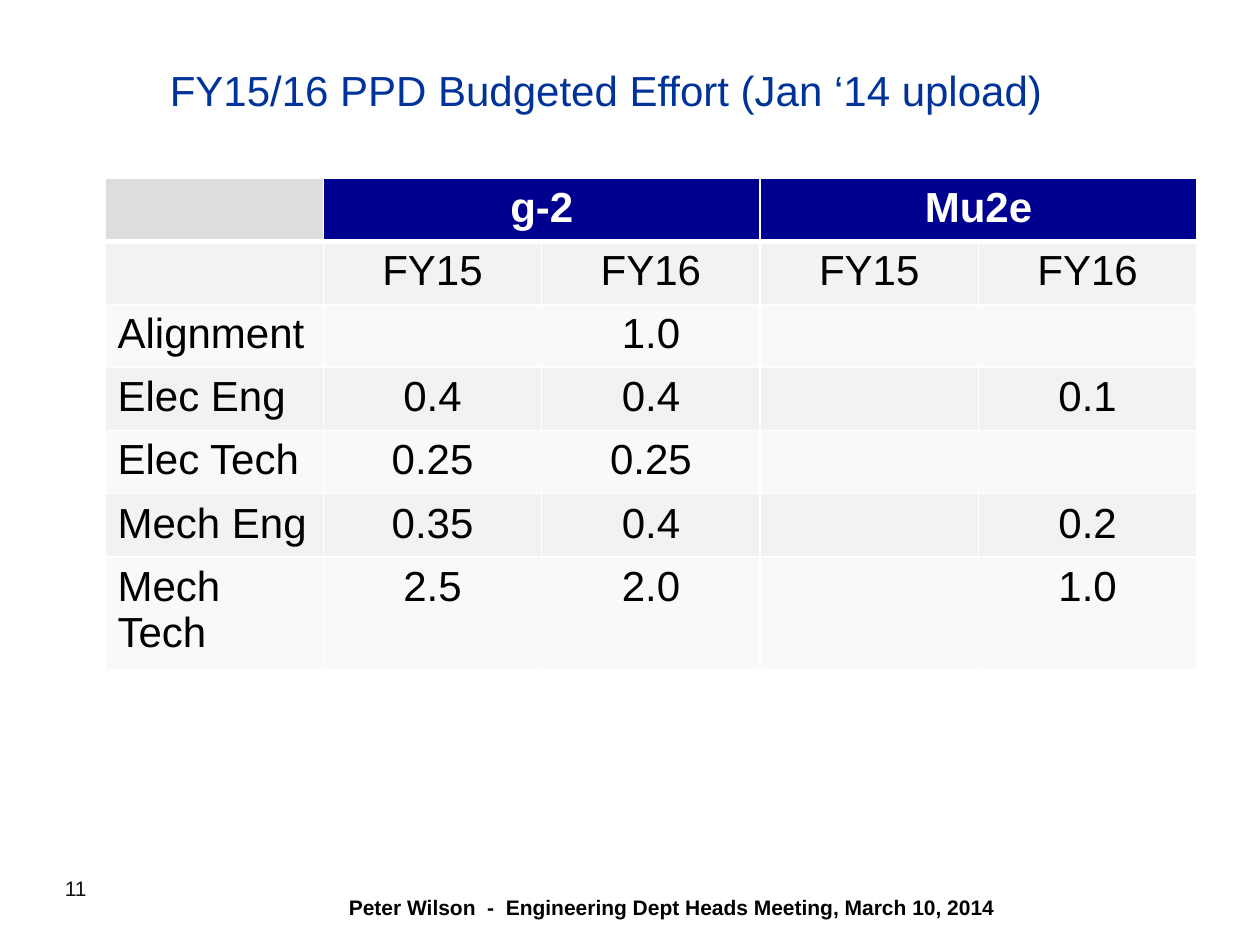
from dataclasses import dataclass

from lxml.etree import SubElement
from pptx import Presentation
from pptx.dml.color import RGBColor
from pptx.enum.text import MSO_ANCHOR, PP_ALIGN
from pptx.oxml.ns import qn
from pptx.slide import Slide
from pptx.util import Inches, Pt

CELL = 10 / 24
EFFORT = [
    ["", "g-2", "", "Mu2e", ""],
    ["", "FY15", "FY16", "FY15", "FY16"],
    ["Alignment", "", "1.0", "", ""],
    ["Elec Eng", "0.4", "0.4", "", "0.1"],
    ["Elec Tech", "0.25", "0.25", "", ""],
    ["Mech Eng", "0.35", "0.4", "", "0.2"],
    ["Mech Tech", "2.5", "2.0", "", "1.0"],
]


def color(value):
    return RGBColor.from_string(value)


def grid(*units):
    return [Inches(unit * CELL) for unit in units]


@dataclass
class SlideBuilder:
    """Draws styled elements on a grid of 24 columns by 18 rows."""

    slide: Slide
    font: str = "Arial"
    ink: str = "000000"
    header: str = "000090"
    corner: str = "DDDDDD"
    bands: tuple = ("F9F9F9", "F2F2F2")
    rule: str = "FFFFFF"

    def set_text(self, frame, wording, size, ink, bold=False, align=PP_ALIGN.LEFT):
        frame.text = wording
        paragraph = frame.paragraphs[0]
        paragraph.alignment = align
        font = paragraph.font
        if paragraph.runs:
            font = paragraph.runs[0].font
        font.name, font.size, font.bold = self.font, Pt(size), bold
        font.color.rgb = color(ink)

    def text(self, wording, place, size, anchor, **style):
        frame = self.slide.shapes.add_textbox(*grid(*place)).text_frame
        frame.word_wrap = True
        frame.vertical_anchor = anchor
        self.set_text(frame, wording, size, **style)

    def border(self, cell, side, width):
        line = SubElement(cell._tc.get_or_add_tcPr(), qn(f"a:ln{side}"), w=str(Pt(width)))
        SubElement(SubElement(line, qn("a:solidFill")), qn("a:srgbClr"), val=self.rule)

    def table(self, rows, place, heights, size):
        frame = self.slide.shapes.add_table(len(rows), len(rows[0]), *grid(*place))
        table = frame.table
        for row, height in zip(table.rows, grid(*heights)):
            row.height = height
        for r, values in enumerate(rows):
            for c, value in enumerate(values):
                self.cell(table.cell(r, c), value, r, c, size)
        for start in range(1, len(rows[0]), 2):
            table.cell(0, start).merge(table.cell(0, start + 1))

    def cell(self, cell, value, row, column, size):
        top = row == 0
        for side in "LRTB":
            thick = (top and side == "B") or (row == 1 and side == "T")
            self.border(cell, side, 3 if thick else 1)
        fill = self.bands[row % 2]
        if top:
            fill = self.header if column else self.corner
        cell.fill.solid()
        cell.fill.fore_color.rgb = color(fill)
        align = PP_ALIGN.CENTER if column else PP_ALIGN.LEFT
        self.set_text(cell.text_frame, value, size, self.rule if top else self.ink, top, align)


def main():
    deck = Presentation()
    deck.slide_width, deck.slide_height = Inches(10), Inches(7.5)
    builder = SlideBuilder(deck.slides.add_slide(deck.slide_layouts[6]))
    builder.text("FY15/16 PPD Budgeted Effort (Jan ‘14 upload)", (3, 0.2, 19.2, 3), 24,
                 MSO_ANCHOR.MIDDLE, ink="003399")
    heights = [1.2] + [0.98] * (len(EFFORT) - 1)
    builder.table(EFFORT, (2, 3.4, 20.8, sum(heights)), heights, 24)
    builder.text("Peter Wilson  -  Engineering Dept Heads Meeting, March 10, 2014",
                 (6, 16.44, 13.6, 1.2), 12, MSO_ANCHOR.BOTTOM,
                 ink=builder.ink, bold=True, align=PP_ALIGN.CENTER)
    builder.text("11", (1, 16.56, 5, 1.2), 12, MSO_ANCHOR.TOP, ink="111111")
    deck.save("out.pptx")


if __name__ == "__main__":
    main()
